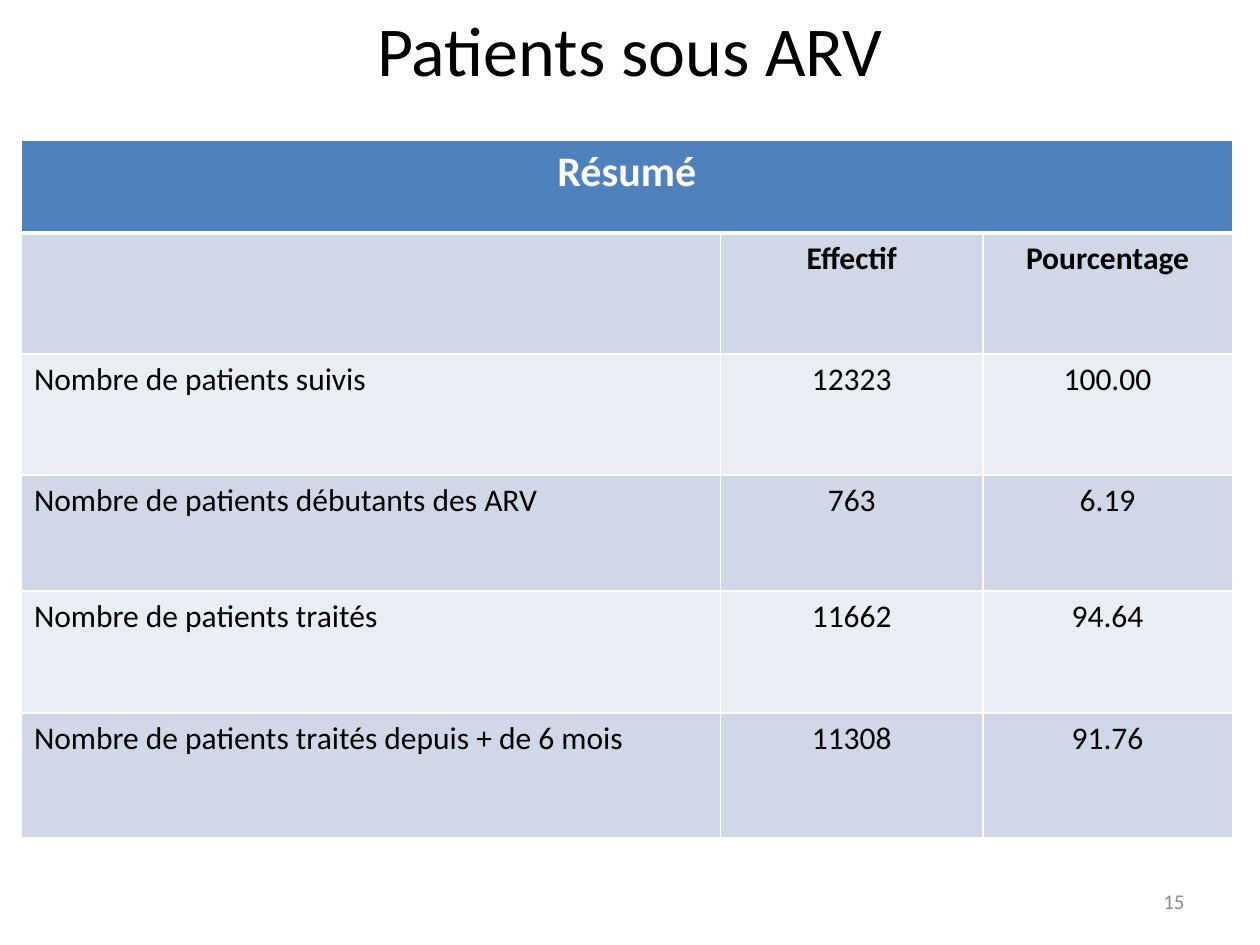
from lxml import etree
from pptx import Presentation
from pptx import util as u
from pptx.dml.color import RGBColor
from pptx.enum import text
from pptx.oxml import ns

WIDTH, HEIGHT = u.Inches(10), u.Inches(7.5)
FONT = "Calibri"
BLACK = RGBColor(0x00, 0x00, 0x00)
WHITE = RGBColor(0xFF, 0xFF, 0xFF)
GREY = RGBColor(0x8C, 0x8C, 0x8C)
HEADER_BLUE = RGBColor(0x4F, 0x81, 0xBD)
BANDS = (RGBColor(0xE9, 0xED, 0xF4), RGBColor(0xD0, 0xD8, 0xE8))

LEFT, CENTER, RIGHT = (text.PP_ALIGN.LEFT, text.PP_ALIGN.CENTER,
                       text.PP_ALIGN.RIGHT)
COLUMNS = (5.55, 2.08, 1.98)
ROWS = (0.74, 0.96, 0.96, 0.92, 0.97, 0.99)
SUMMARY = (
    ("Résumé", "", ""),
    ("", "Effectif", "Pourcentage"),
    ("Nombre de patients suivis", "12323", "100.00"),
    ("Nombre de patients débutants des ARV", "763", "6.19"),
    ("Nombre de patients traités", "11662", "94.64"),
    ("Nombre de patients traités depuis + de 6 mois", "11308", "91.76"),
)


def share(left, top, width, height):
    """Turn shares of the slide's size into a box of lengths."""
    return (int(left * WIDTH), int(top * HEIGHT),
            int(width * WIDTH), int(height * HEIGHT))


def write(frame, words, align, size, color=BLACK, bold=False):
    para = frame.paragraphs[0]
    para.alignment = align
    span = para.add_run()
    span.text = words
    span.font.color.rgb = color
    look = {"name": FONT, "size": u.Pt(size), "bold": bold}
    for name, value in look.items():
        setattr(span.font, name, value)


def set_borders(cell, **widths):
    """Draw white cell borders, given as edge tag = width in points."""
    props = cell._tc.get_or_add_tcPr()
    for place, (edge, width) in enumerate(widths.items()):
        line = etree.Element(ns.qn(f"a:{edge}"), w=str(u.Pt(width)))
        fill = etree.SubElement(line, ns.qn("a:solidFill"))
        etree.SubElement(fill, ns.qn("a:srgbClr"), val=str(WHITE))
        props.insert(place, line)


def place_title(page, box):
    title = page.shapes.title
    title.left, title.top, title.width, title.height = box
    title.text_frame.vertical_anchor = text.MSO_ANCHOR.TOP
    write(title.text_frame, "Patients sous ARV", CENTER, 40)


def place_summary(page, box):
    """Fill the box with the table, its grid scaled to the box."""
    left, top, width, height = box
    table = page.shapes.add_table(len(ROWS), len(COLUMNS), *box).table
    for column, part in zip(table.columns, COLUMNS):
        column.width = int(width * part / sum(COLUMNS))
    for row, part in zip(table.rows, ROWS):
        row.height = int(height * part / sum(ROWS))
    table.cell(0, 0).merge(table.cell(0, len(COLUMNS) - 1))

    for r, values in enumerate(SUMMARY):
        header = r == 0
        for c, words in enumerate(values):
            cell = table.cell(r, c)
            cell.fill.solid()
            cell.fill.fore_color.rgb = HEADER_BLUE if header else BANDS[r % 2]
            set_borders(cell, lnL=1, lnR=1, lnT=3 if r == 1 else 1,
                        lnB=3 if header else 1)
            if words:
                write(cell.text_frame, words,
                      LEFT if c == 0 and not header else CENTER,
                      24 if header else 18,
                      WHITE if header else BLACK, bold=r < 2)


def place_page_number(page, box):
    frame = page.shapes.add_textbox(*box).text_frame
    frame.word_wrap = True
    frame.vertical_anchor = text.MSO_ANCHOR.MIDDLE
    write(frame, "15", RIGHT, 12, GREY)


def main():
    deck = Presentation()
    deck.slide_width, deck.slide_height = WIDTH, HEIGHT
    page = deck.slides.add_slide(deck.slide_layouts.get_by_name("Title Only"))
    place_title(page, share(0, 0, 1, 0.103))
    place_summary(page, share(0.017, 0.148, 0.961, 0.739))
    place_page_number(page, share(0.717, 0.927, 0.233, 0.053))
    deck.save("out.pptx")


if __name__ == "__main__":
    main()
